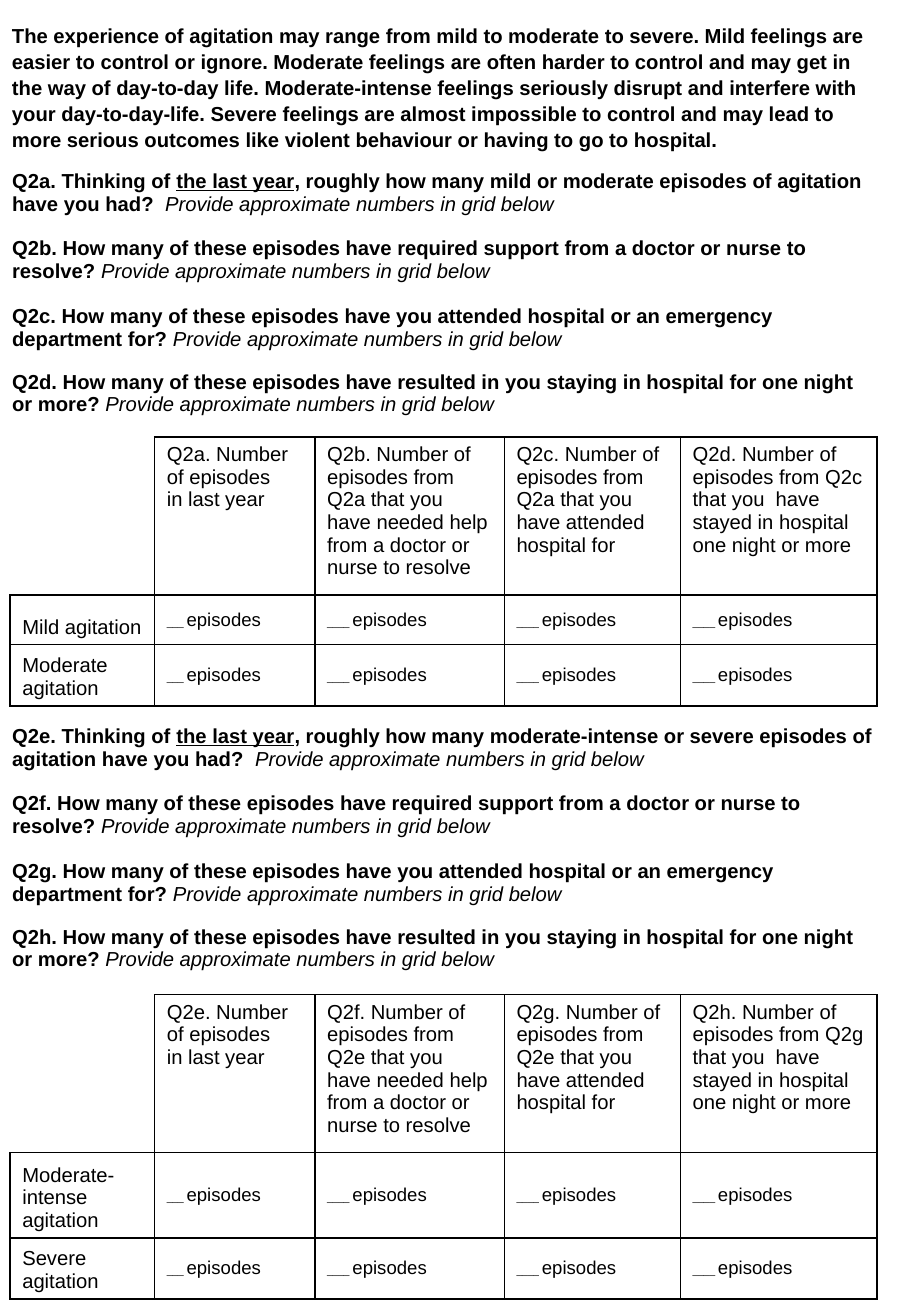
"""Build the agitation questionnaire page with two question blocks and two answer grids."""
from dataclasses import dataclass
from lxml.etree import SubElement
from pptx import Presentation
from pptx.dml.color import RGBColor
from pptx.enum.text import MSO_ANCHOR
from pptx.oxml.ns import qn
from pptx.util import Pt


@dataclass(frozen=True)
class Theme:
    font: str = "Arial"
    ink: str = "000000"
    body: float = 12
    answer: float = 11
    blank: float = 6
    border: float = 1
    intro_spacing: float = 1.07
    gap: float = 13.5


T = Theme()
INTRO = (
    "The experience of agitation may range from mild to moderate to severe. Mild feelings are easier "
    "to control or ignore. Moderate feelings are often harder to control and may get in the way of "
    "day-to-day life. Moderate-intense feelings seriously disrupt and interfere with your "
    "day-to-day-life. Severe feelings are almost impossible to control and may lead to more serious "
    "outcomes like violent behaviour or having to go to hospital."
)
HINT = "Provide approximate numbers in grid below"
FOLLOW_UPS = [
    "How many of these episodes have required support from a doctor or nurse to resolve? ",
    "How many of these episodes have you attended hospital or an emergency department for? ",
    "How many of these episodes have resulted in you staying in hospital for one night or more? ",
]
HEADERS = [
    ["{0}. Number of episodes", "in last year"],
    ["{1}. Number of episodes from {0} that you have needed help from a doctor or nurse to resolve"],
    ["{2}. Number of episodes from {0} that you  have attended hospital for"],
    ["{3}. Number of episodes from {2} that you  have stayed in hospital one night or more"],
]
BLANKS = ["___ ", "____ ", "____ ", "____ "]
SECTIONS = [
    dict(codes=["Q2a", "Q2b", "Q2c", "Q2d"], kind="mild or moderate",
         levels=["Mild agitation", "Moderate agitation"],
         questions_top=97.2, grid_top=259, grid_rows=[93.6, 29.4, 36.2]),
    dict(codes=["Q2e", "Q2f", "Q2g", "Q2h"], kind="moderate-intense or severe",
         levels=["Moderate-intense agitation", "Severe agitation"],
         questions_top=426.2, grid_top=589.4, grid_rows=[93.6, 50.4, 36.2]),
]
GRID_LEFT, GRID_COLS = 6, [85.7, 95, 112.3, 104.4, 116.6]
QUESTION_COLS, QUESTION_ROWS = [526.3], [39.6, 79.2, 36]


def add_run(p, text, size=T.body, bold=False, italic=False, underline=False):
    r = p.add_run()
    r.text = text
    f = r.font
    f.name, f.size, f.bold, f.italic, f.underline = T.font, Pt(size), bold, italic, underline
    f.color.rgb = RGBColor.from_string(T.ink)


def add_table(s, left, top, cols, rows):
    frame = s.shapes.add_table(len(rows), len(cols), Pt(left), Pt(top), Pt(sum(cols)), Pt(sum(rows)))
    table = frame.table
    table.first_row = table.horz_banding = False
    for col, width in zip(table.columns, cols):
        col.width = Pt(width)
    for row, height in zip(table.rows, rows):
        row.height = Pt(height)
    return table


def set_borders(cell, drawn):
    tc_pr = cell._tc.get_or_add_tcPr()
    for side in "LRTB":
        ln = SubElement(tc_pr, qn(f"a:ln{side}"), w=str(Pt(T.border)))
        if side in drawn:
            fill = SubElement(ln, qn("a:solidFill"))
            SubElement(fill, qn("a:srgbClr"), val=T.ink)
        else:
            SubElement(ln, qn("a:noFill"))
    cell.fill.background()


def add_question(p, code, question):
    add_run(p, f"{code}. {question}", bold=True)
    add_run(p, HINT, italic=True)


def add_questions(s, section):
    table = add_table(s, 0, section["questions_top"], QUESTION_COLS, QUESTION_ROWS)
    cells = [table.cell(i, 0) for i in range(len(QUESTION_ROWS))]
    for cell in cells:
        set_borders(cell, "")
    first, middle, last = [cell.text_frame.paragraphs[0] for cell in cells]
    codes = section["codes"]
    add_run(first, f"{codes[0]}. Thinking of ", bold=True)
    add_run(first, "the last year", bold=True, underline=True)
    add_run(first, f", roughly how many {section['kind']} episodes of agitation have you had?  ", bold=True)
    add_run(first, HINT, italic=True)
    second = cells[1].text_frame.add_paragraph()
    second.space_before = Pt(T.gap)
    for p, code, question in zip([middle, second, last], codes[1:], FOLLOW_UPS):
        add_question(p, code, question)


def add_grid(s, section):
    table = add_table(s, GRID_LEFT, section["grid_top"], GRID_COLS, section["grid_rows"])
    for i in range(len(section["grid_rows"])):
        for j in range(len(GRID_COLS)):
            set_borders(table.cell(i, j), "LRTB" if i or j else "RB")
    for j, lines in enumerate(HEADERS, 1):
        tf = table.cell(0, j).text_frame
        for k, line in enumerate(lines):
            p = tf.add_paragraph() if k else tf.paragraphs[0]
            add_run(p, line.format(*section["codes"]))
    for i, level in enumerate(section["levels"], 1):
        label = table.cell(i, 0)
        label.vertical_anchor = MSO_ANCHOR.BOTTOM
        add_run(label.text_frame.paragraphs[0], level)
        for j, blank in enumerate(BLANKS, 1):
            cell = table.cell(i, j)
            cell.vertical_anchor = MSO_ANCHOR.MIDDLE
            p = cell.text_frame.paragraphs[0]
            add_run(p, blank, size=T.blank)
            add_run(p, "episodes", size=T.answer)


def main():
    prs = Presentation()
    prs.slide_width, prs.slide_height = Pt(540), Pt(779.76)
    s = prs.slides.add_slide(prs.slide_layouts[6])
    tf = s.shapes.add_textbox(Pt(0), Pt(9.4), Pt(533.5), Pt(79.9)).text_frame
    tf.word_wrap = True
    p = tf.paragraphs[0]
    p.line_spacing = T.intro_spacing
    add_run(p, INTRO, bold=True)
    for section in SECTIONS:
        add_grid(s, section)
        add_questions(s, section)
    prs.save("out.pptx")


if __name__ == "__main__":
    main()
